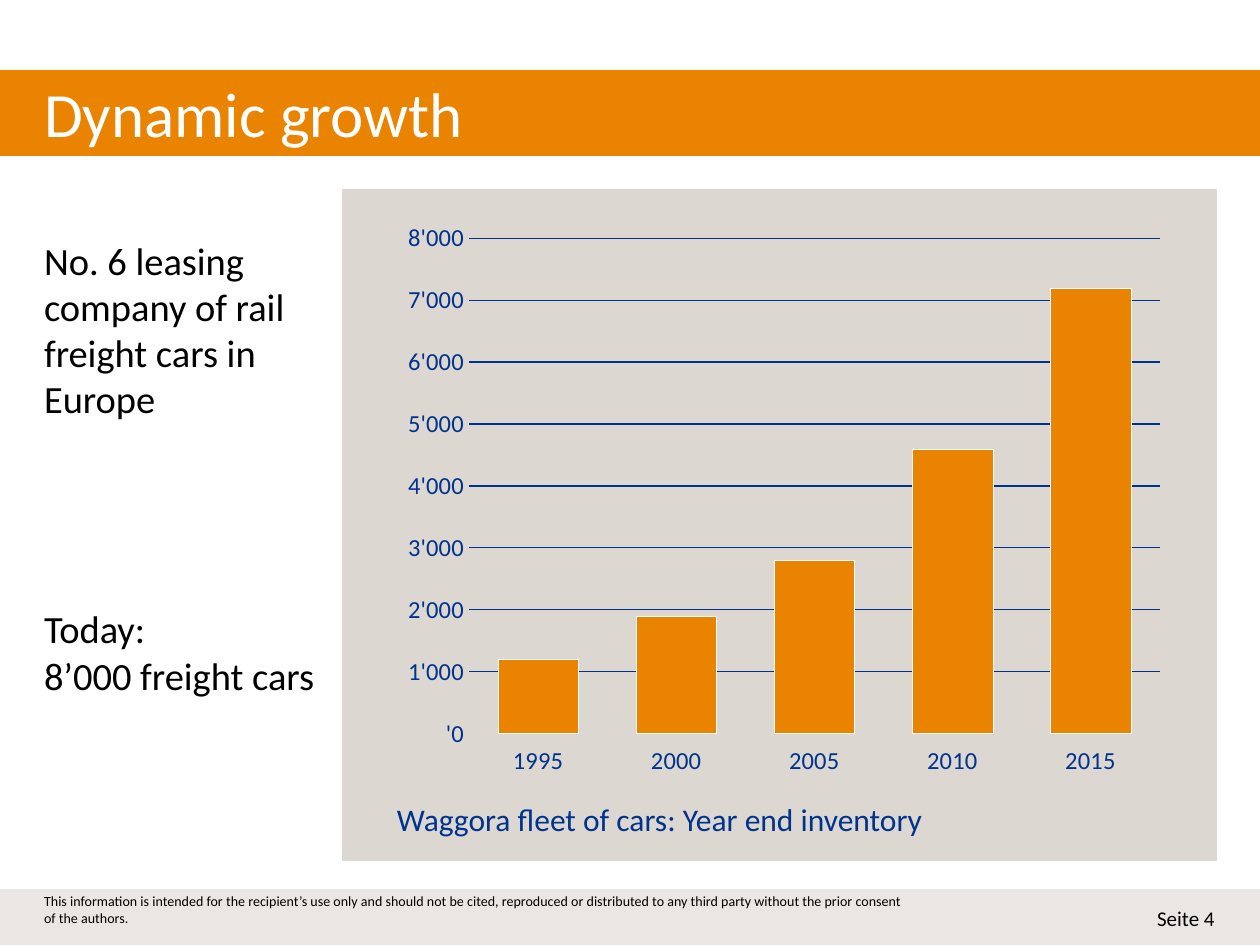
from dataclasses import dataclass

from lxml import etree
from pptx import Presentation
from pptx.chart.data import CategoryChartData
from pptx.dml.color import RGBColor
from pptx.enum.chart import XL_CHART_TYPE, XL_TICK_MARK
from pptx.enum.shapes import MSO_SHAPE
from pptx.enum.text import MSO_ANCHOR, PP_ALIGN
from pptx.oxml.ns import qn
from pptx.util import Inches, Pt

RECT = MSO_SHAPE.RECTANGLE
COLUMN = XL_CHART_TYPE.COLUMN_CLUSTERED
NONE, OUT = XL_TICK_MARK.NONE, XL_TICK_MARK.OUTSIDE
TOP, MIDDLE = MSO_ANCHOR.TOP, MSO_ANCHOR.MIDDLE
LEFT, RIGHT = PP_ALIGN.LEFT, PP_ALIGN.RIGHT
FONT = "Calibri"
ORANGE, BLUE, BLACK, WHITE = "E98300", "00338D", "000000", "FFFFFF"
EDGE = 0.35


@dataclass
class Band:
    left: float
    top: float
    width: float
    height: float
    color: str


@dataclass
class Label:
    left: float
    top: float
    width: float
    height: float
    text: str
    size: int
    color: str = BLACK
    anchor: MSO_ANCHOR = TOP
    align: PP_ALIGN = LEFT


BANDS = [
    Band(0, 7.06, 10, 0.44, "EAE6E3"),
    Band(0, 0.56, 10, 0.67, ORANGE),
    Band(2.72, 1.51, 6.93, 5.32, "DDD7D2"),
]
NOTICE = (
    "This information is intended for the recipient’s use only and should not be "
    "cited, reproduced or distributed to any third party without the prior consent "
    "of the authors."
)
LABELS = [
    Label(EDGE, 0.56, 9.29, 0.67, "Dynamic growth", 36, WHITE, MIDDLE),
    Label(7.44, 7.15, 2.2, 0.28, "Seite 4", 12, BLACK, MIDDLE, RIGHT),
    Label(EDGE, 7.08, 6.93, 0.28, NOTICE, 8, BLACK, MIDDLE),
    Label(3.15, 6.35, 4.8, 0.31,
          "Waggora fleet of cars: Year end inventory", 18, BLUE),
]
CLAIMS = Label(
    EDGE, 1.88, 2.2, 4.95,
    "No. 6 leasing company of rail freight cars in Europe\n"
    "Today:\v8’000 freight cars", 22,
)
FLEET = {"1995": 1200, "2000": 1900, "2005": 2800, "2010": 4600, "2015": 7200}
PLOT = {"x": 0.11, "y": 0.04, "w": 0.87, "h": 0.86}


def rgb(code: str) -> RGBColor:
    return RGBColor.from_string(code)


def style(font, size: int, color: str) -> None:
    font.name = FONT
    font.size = Pt(size)
    font.color.rgb = rgb(color)


def stroke(line, color: str, width: float) -> None:
    line.color.rgb = rgb(color)
    line.width = Pt(width)


def place(item: Band | Label) -> list:
    return [Inches(n) for n in (item.left, item.top, item.width, item.height)]


def draw_band(shapes, band: Band) -> None:
    shape = shapes.add_shape(RECT, *place(band))
    shape.shadow.inherit = False
    shape.fill.solid()
    shape.fill.fore_color.rgb = rgb(band.color)
    stroke(shape.line, band.color, 1)


def draw_label(shapes, label: Label):
    frame = shapes.add_textbox(*place(label)).text_frame
    frame.word_wrap = True
    frame.margin_left = frame.margin_right = 0
    frame.margin_top = frame.margin_bottom = 0
    frame.vertical_anchor = label.anchor
    frame.text = label.text
    for para in frame.paragraphs:
        para.alignment = label.align
        for run in para.runs:
            style(run.font, label.size, label.color)
    return frame


def set_plot(chart) -> None:
    area = chart._chartSpace.find(".//" + qn("c:plotArea"))
    for old in area.findall(qn("c:layout")):
        area.remove(old)
    layout = etree.Element(qn("c:layout"))
    area.insert(0, layout)
    manual = etree.SubElement(layout, qn("c:manualLayout"))
    parts = {"layoutTarget": "inner", "xMode": "edge", "yMode": "edge", **PLOT}
    for tag, val in parts.items():
        etree.SubElement(manual, qn("c:" + tag)).set("val", str(val))


def draw_chart(shapes) -> None:
    data = CategoryChartData()
    data.categories = list(FLEET)
    data.add_series("Series 1", list(FLEET.values()))
    chart = shapes.add_chart(
        COLUMN, Inches(3.03), Inches(1.71), Inches(6.3), Inches(4.57), data
    ).chart
    style(chart.font, 10, BLACK)
    chart.has_legend = False
    chart.has_title = False
    set_plot(chart)

    plot = chart.plots[0]
    plot.gap_width = 71
    plot.overlap = -27
    plot.vary_by_categories = False
    bars = plot.series[0].format
    bars.fill.solid()
    bars.fill.fore_color.rgb = rgb(ORANGE)
    stroke(bars.line, WHITE, 0.25)

    years, count = chart.category_axis, chart.value_axis
    for axis in (years, count):
        style(axis.tick_labels.font, 14, BLUE)
    years.major_tick_mark = OUT
    stroke(years.format.line, "D9D9D9", 0.75)
    count.major_tick_mark = NONE
    count.minimum_scale, count.maximum_scale = 0, 8000
    count.major_unit = 1000
    count.format.line.fill.background()
    stroke(count.major_gridlines.format.line, BLUE, 0.75)
    count.tick_labels.number_format = r"__#\'##0;\-#\'##0"
    count.tick_labels.number_format_is_linked = False


def main() -> None:
    deck = Presentation()
    deck.slide_width, deck.slide_height = Inches(10), Inches(7.5)
    shapes = deck.slides.add_slide(deck.slide_layouts[6]).shapes
    for band in BANDS:
        draw_band(shapes, band)
    for label in LABELS:
        draw_label(shapes, label)
    claims = draw_label(shapes, CLAIMS)
    claims.paragraphs[1].space_before = Pt(105)
    draw_chart(shapes)
    deck.save("out.pptx")


if __name__ == "__main__":
    main()
